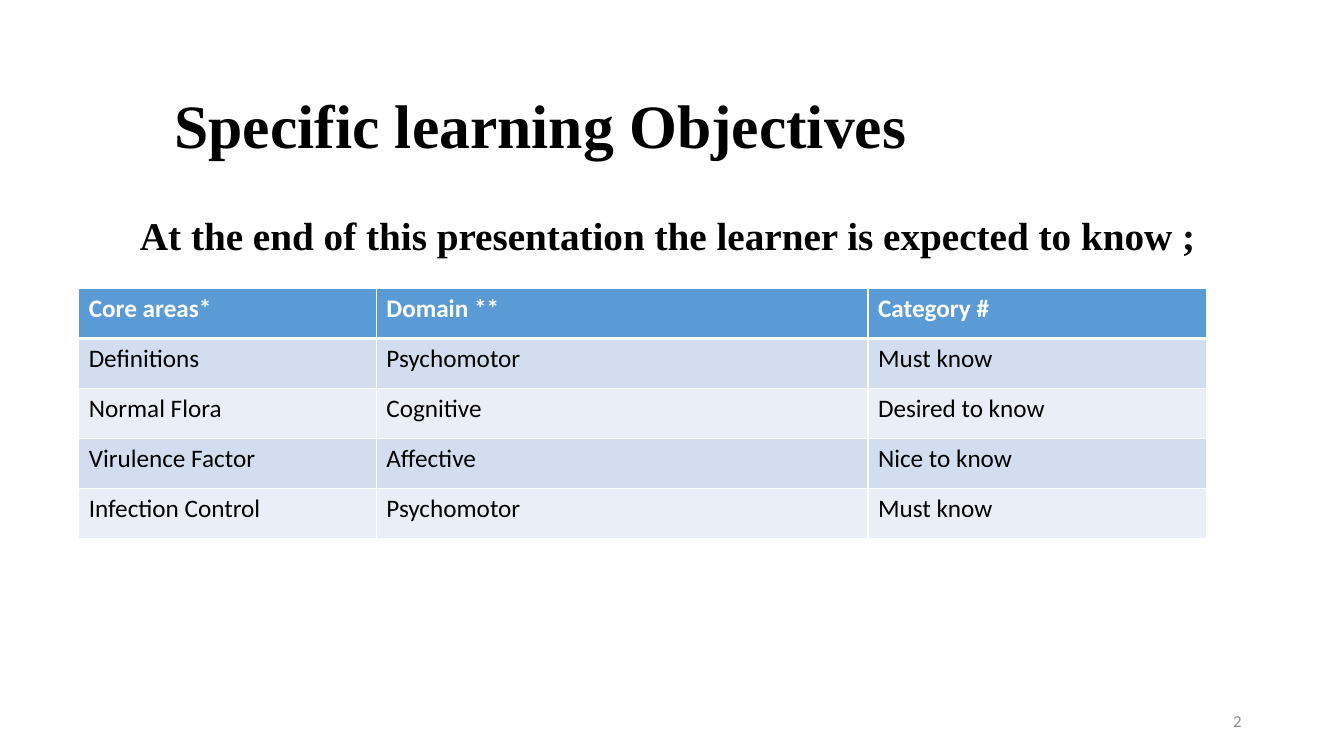
from lxml import etree
from pptx import Presentation
from pptx import util as u
from pptx.dml.color import RGBColor
from pptx.enum import text
from pptx.oxml import ns

BLACK = RGBColor(0x00, 0x00, 0x00)
WHITE = RGBColor(0xFF, 0xFF, 0xFF)
GREY = RGBColor(0x8C, 0x8C, 0x8C)
HEADER_BLUE = RGBColor(0x5B, 0x9B, 0xD5)
BANDS = (RGBColor(0xEA, 0xEF, 0xF7), RGBColor(0xD2, 0xDE, 0xEF))
SERIF, SANS = "Times New Roman", "Calibri"

OBJECTIVES = [
    ("Core areas*", "Domain **", "Category #"),
    ("Definitions", "Psychomotor", "Must know"),
    ("Normal Flora", "Cognitive", "Desired to know"),
    ("Virulence Factor", "Affective", "Nice to know"),
    ("Infection Control", "Psychomotor", "Must know"),
]


class SlideBuilder:
    """Adds styled titles, text boxes and tables to one slide."""

    def __init__(self, page):
        self.page = page

    def set_text(self, frame, words, size, font, color, bold=False,
                 align=text.PP_ALIGN.LEFT):
        frame.text = words
        para = frame.paragraphs[0]
        para.alignment = align
        para.font.size = u.Pt(size)
        para.font.name = font
        para.font.bold = bold
        para.font.color.rgb = color
        return para

    def title(self, words, left, top, width, height):
        box = self.page.shapes.title
        box.left, box.top = u.Pt(left), u.Pt(top)
        box.width, box.height = u.Pt(width), u.Pt(height)
        frame = box.text_frame
        frame.vertical_anchor = text.MSO_ANCHOR.MIDDLE
        para = self.set_text(frame, words, 44, SERIF, BLACK, bold=True)
        para.line_spacing = 0.9

    def text_box(self, words, left, top, width, height, size, font, color,
                 anchor=text.MSO_ANCHOR.TOP, **style):
        box = self.page.shapes.add_textbox(
            u.Pt(left), u.Pt(top), u.Pt(width), u.Pt(height))
        frame = box.text_frame
        frame.word_wrap = True
        frame.vertical_anchor = anchor
        self.set_text(frame, words, size, font, color, **style)

    def border(self, cell, side, points):
        line = etree.SubElement(cell._tc.get_or_add_tcPr(),
                                ns.qn(f"a:ln{side}"), w=str(u.Pt(points)))
        fill = etree.SubElement(line, ns.qn("a:solidFill"))
        etree.SubElement(fill, ns.qn("a:srgbClr"), val=str(WHITE))

    def table(self, rows, left, top, widths, row_height):
        table = self.page.shapes.add_table(
            len(rows), len(widths), u.Pt(left), u.Pt(top),
            u.Pt(sum(widths)), u.Pt(row_height * len(rows))).table
        for column, width in zip(table.columns, widths):
            column.width = u.Pt(width)
        for r, row in enumerate(rows):
            header = r == 0
            for c, words in enumerate(row):
                cell = table.cell(r, c)
                for side in "LRTB":
                    thick = (r, side) in ((0, "B"), (1, "T"))
                    self.border(cell, side, 3 if thick else 1)
                cell.fill.solid()
                cell.fill.fore_color.rgb = HEADER_BLUE if header else BANDS[r % 2]
                self.set_text(cell.text_frame, words, 18, SANS,
                              WHITE if header else BLACK, bold=header)


def main():
    deck = Presentation()
    deck.slide_width, deck.slide_height = u.Pt(960), u.Pt(540)
    builder = SlideBuilder(deck.slides.add_slide(deck.slide_layouts[5]))
    builder.title("Specific learning Objectives", 117.4, 48.2, 729.4, 87.1)
    builder.table(OBJECTIVES, 56.2, 206, (212.6, 351.2, 242), 35.8)
    builder.text_box(
        "At the end of this presentation the learner is expected to know ;",
        92.9, 147.6, 771.2, 41, 28, SERIF, BLACK, bold=True)
    builder.text_box("2", 678, 500.5, 216, 28.8, 12, SANS, GREY,
                     anchor=text.MSO_ANCHOR.MIDDLE, align=text.PP_ALIGN.RIGHT)
    deck.save("out.pptx")


if __name__ == "__main__":
    main()
